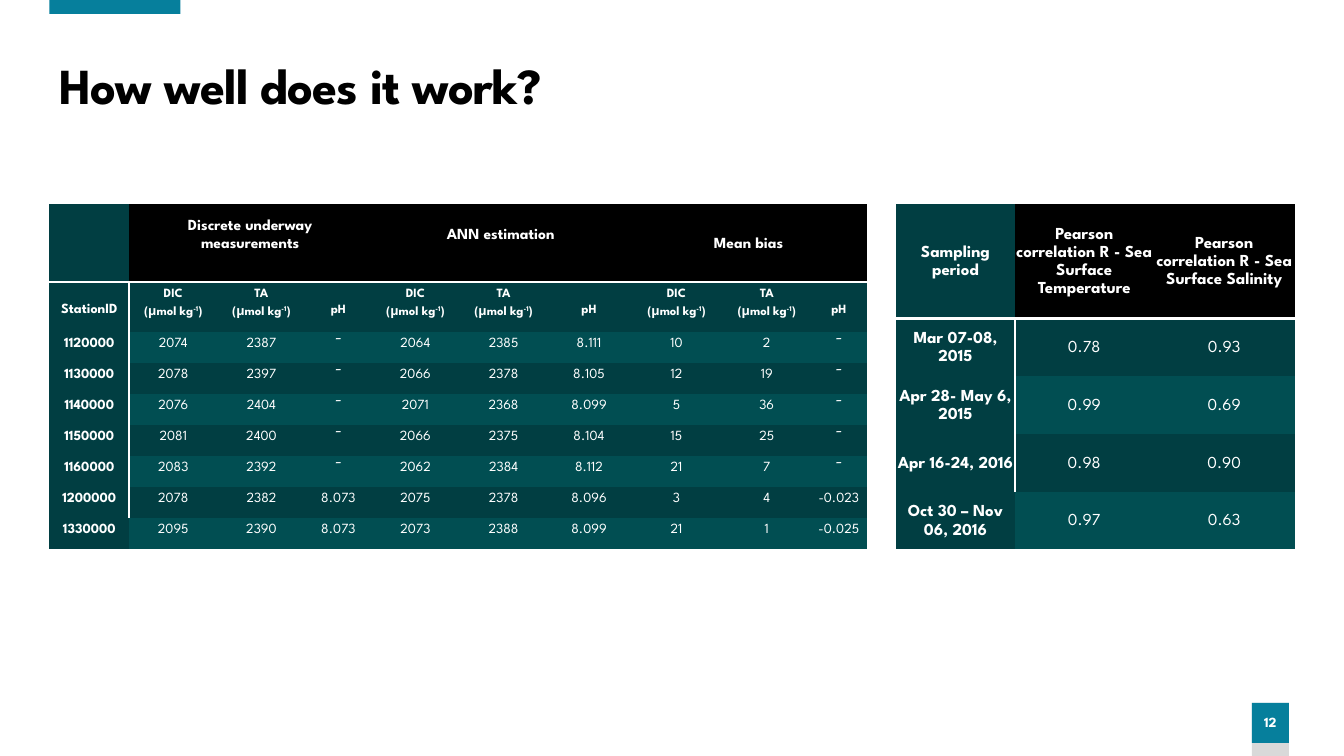
import pptx
import pptx.dml.color
import pptx.enum.shapes
import pptx.enum.text
import pptx.oxml
import pptx.oxml.ns
import pptx.util

Pt = pptx.util.Pt
RGBColor = pptx.dml.color.RGBColor
ALIGN = pptx.enum.text.PP_ALIGN
ANCHOR = pptx.enum.text.MSO_ANCHOR

BLACK = RGBColor(0x00, 0x00, 0x00)
WHITE = RGBColor(0xFF, 0xFF, 0xFF)
BLUE = RGBColor(0x06, 0x7F, 0x9C)
GREY = RGBColor(0xD9, 0xD9, 0xD9)
DARK_TEAL = RGBColor(0x01, 0x3E, 0x42)
TEAL = RGBColor(0x01, 0x4E, 0x52)
PLAIN_TABLE = "{2D5ABB26-0587-4C30-8999-92F81FD0307C}"

# Table content: a tuple is a line with its middle span raised
UNIT = ("(μmol kg", "-1", ")")
GROUPS = {1: ["Discrete underway", "measurements"], 4: ["ANN estimation"], 7: ["Mean bias"]}
MEASURES = [["DIC", UNIT], ["TA", UNIT], ["pH"]]
STATIONS = [
    "1120000 2074 2387 - 2064 2385 8.111 10 2 -",
    "1130000 2078 2397 - 2066 2378 8.105 12 19 -",
    "1140000 2076 2404 - 2071 2368 8.099 5 36 -",
    "1150000 2081 2400 - 2066 2375 8.104 15 25 -",
    "1160000 2083 2392 - 2062 2384 8.112 21 7 -",
    "1200000 2078 2382 8.073 2075 2378 8.096 3 4 -0.023",
    "1330000 2095 2390 8.073 2073 2388 8.099 21 1 -0.025",
]
CORRELATIONS = [
    ("Mar 07-08, 2015", "0.78", "0.93"),
    ("Apr 28- May 6, 2015", "0.99", "0.69"),
    ("Apr 16-24, 2016", "0.98", "0.90"),
    ("Oct 30 – Nov 06, 2016", "0.97", "0.63"),
]


def write(frame, lines, size=10, bold=False, color=WHITE, font="League Spartan",
          align=ALIGN.CENTER, spacing=Pt(13), tracking=None):
    """Fill a text frame with one paragraph per line."""
    frame.word_wrap = True
    for number, line in enumerate(lines):
        para = frame.add_paragraph() if number else frame.paragraphs[0]
        para.alignment = align
        para.line_spacing = spacing
        spans = line if isinstance(line, tuple) else (line,)
        for place, text in enumerate(spans):
            span = para.add_run()
            span.text = text
            span.font.name = font
            span.font.size = Pt(size)
            span.font.bold = bold
            span.font.color.rgb = color
            properties = span.font._element
            if place == 1:
                properties.set("baseline", "30000")
            if tracking is not None:
                properties.set("spc", str(tracking))


class SlideBuilder:
    def __init__(self):
        self.deck = pptx.Presentation()
        self.deck.slide_width = Pt(960)
        self.deck.slide_height = Pt(540)
        self.page = self.deck.slides.add_slide(self.deck.slide_layouts[5])

    def title(self, text, left, top, width, height):
        box = self.page.shapes.title
        box.left, box.top, box.width, box.height = map(Pt, (left, top, width, height))
        box.text_frame.vertical_anchor = ANCHOR.MIDDLE
        box.text_frame.auto_size = pptx.enum.text.MSO_AUTO_SIZE.NONE
        write(box.text_frame, [text], size=36, bold=True, color=BLACK,
              align=ALIGN.LEFT, spacing=0.9, tracking=-60)

    def block(self, left, top, width, height, color):
        box = self.page.shapes.add_shape(
            pptx.enum.shapes.MSO_SHAPE.RECTANGLE, *map(Pt, (left, top, width, height)))
        box.shadow.inherit = False
        box.fill.solid()
        box.fill.fore_color.rgb = color
        box.line.fill.background()
        return box

    def table(self, left, top, widths, heights):
        holder = self.page.shapes.add_table(
            len(heights), len(widths), *map(Pt, (left, top, sum(widths), sum(heights))))
        for style in holder._element.iter(pptx.oxml.ns.qn("a:tableStyleId")):
            style.text = PLAIN_TABLE
        table = holder.table
        table.first_row = table.horz_banding = False
        for column, width in zip(table.columns, widths):
            column.width = Pt(width)
        for row, height in zip(table.rows, heights):
            row.height = Pt(height)
        return table

    def border(self, cell, side):
        line = pptx.oxml.parse_xml(
            f'<a:{side} {pptx.oxml.ns.nsdecls("a")} w="25400"><a:solidFill>'
            f'<a:srgbClr val="{WHITE}"/></a:solidFill></a:{side}>')
        cell._tc.get_or_add_tcPr().append(line)

    def cell(self, cell, lines, fill, inset=0, bottom=0, anchor=ANCHOR.MIDDLE,
             sides=(), **style):
        for side in sides:
            self.border(cell, side)
        cell.fill.solid()
        cell.fill.fore_color.rgb = fill
        cell.margin_left = cell.margin_right = Pt(inset)
        cell.margin_top, cell.margin_bottom = 0, Pt(bottom)
        cell.vertical_anchor = anchor
        if lines:
            write(cell.text_frame, lines, **style)


def station_table(slide):
    table = slide.table(35.3, 145.5, [57, 63, 63, 47, 63, 63, 59, 66, 63, 40],
                        [56, 36] + [22.15] * len(STATIONS))

    # Group headings, the first two raised by one line
    for column in range(10):
        slide.cell(table.cell(0, column), GROUPS.get(column), BLACK if column else DARK_TEAL,
                   inset=5, bottom=13 * (column in (1, 4)), sides=["lnB"], size=11, bold=True)
    for column in GROUPS:
        table.cell(0, column).merge(table.cell(0, column + 2))

    # Measure headings
    slide.cell(table.cell(1, 0), ["StationID"], DARK_TEAL, inset=5, sides=["lnR"], bold=True)
    for column, lines in enumerate(MEASURES * 3, 1):
        slide.cell(table.cell(1, column), lines, DARK_TEAL, inset=5, size=9, bold=True,
                   anchor=ANCHOR.TOP if UNIT in lines else ANCHOR.MIDDLE)

    # Station values
    for row, station in enumerate(STATIONS, 2):
        for column, value in enumerate(station.split()):
            dash = value == "-"
            ruled = column == 0 and row <= len(STATIONS)
            slide.cell(table.cell(row, column), [value],
                       TEAL if column and row % 2 == 0 else DARK_TEAL,
                       inset=5, anchor=ANCHOR.TOP, sides=["lnR"] if ruled else [],
                       size=12 if dash else 10, bold=column == 0,
                       font="Vollkorn" if dash else "League Spartan")


def correlation_table(slide):
    table = slide.table(640, 145.5, [85, 99, 101], [82] + [41.25] * len(CORRELATIONS))
    headings = [["Sampling period"],
                ["Pearson correlation R - Sea Surface", "Temperature"],
                ["Pearson correlation R - Sea Surface Salinity"]]
    for column, lines in enumerate(headings):
        slide.cell(table.cell(0, column), lines, BLACK if column else DARK_TEAL,
                   sides=["lnB"], size=12, bold=True)
    for row, values in enumerate(CORRELATIONS, 1):
        for column, value in enumerate(values):
            ruled = column == 0 and row < len(CORRELATIONS)
            slide.cell(table.cell(row, column), [value],
                       TEAL if column and row % 2 == 0 else DARK_TEAL,
                       sides=["lnR"] if ruled else [], size=12, bold=column == 0)


def main():
    slide = SlideBuilder()

    # Page number and top accent
    slide.block(894.2, 502, 26.6, 38, GREY)
    number = slide.block(894.2, 502, 26.6, 28.6, BLUE).text_frame
    number.margin_left = number.margin_right = 0
    number.vertical_anchor = ANCHOR.MIDDLE
    write(number, ["12"], bold=True, spacing=0.9)
    slide.block(35.3, 0, 93.6, 10, BLUE)

    # Title and tables
    slide.title("How well does it work?", 35.3, 39.6, 880, 46.8)
    station_table(slide)
    correlation_table(slide)

    slide.deck.save("out.pptx")


if __name__ == "__main__":
    main()
